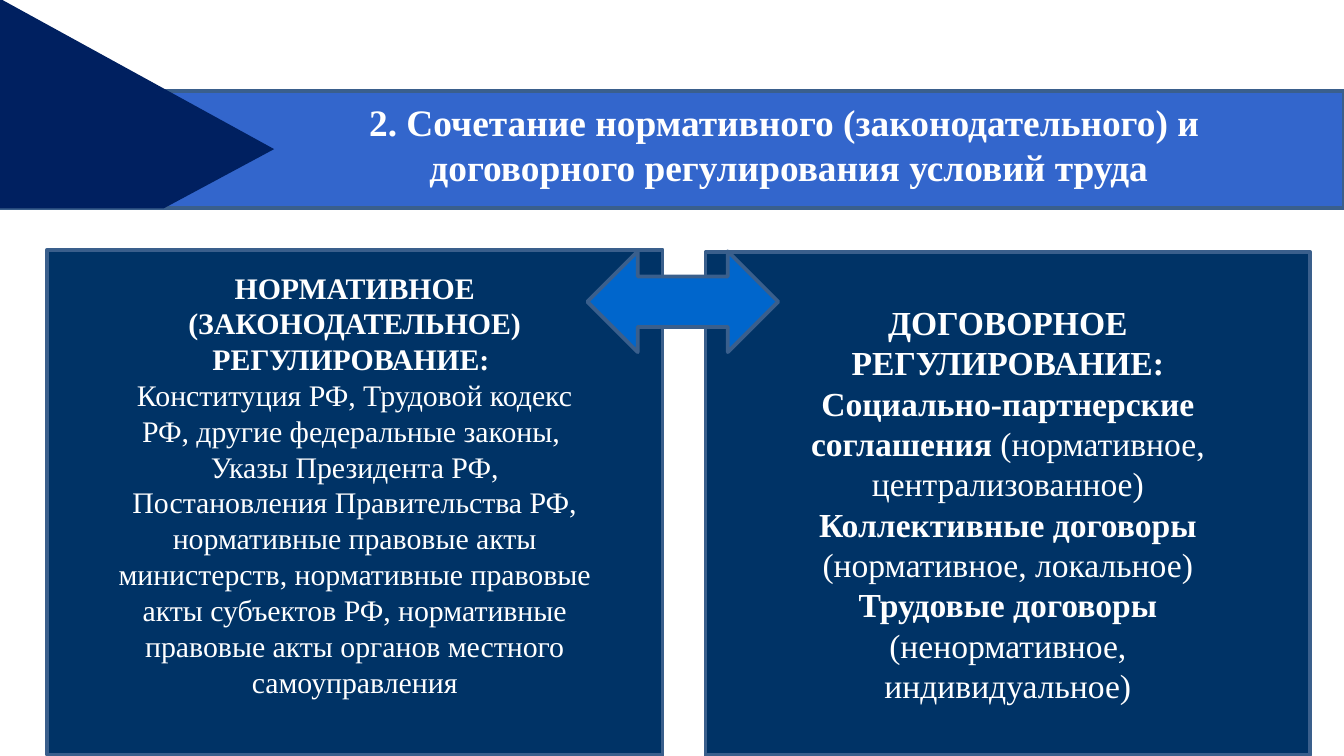
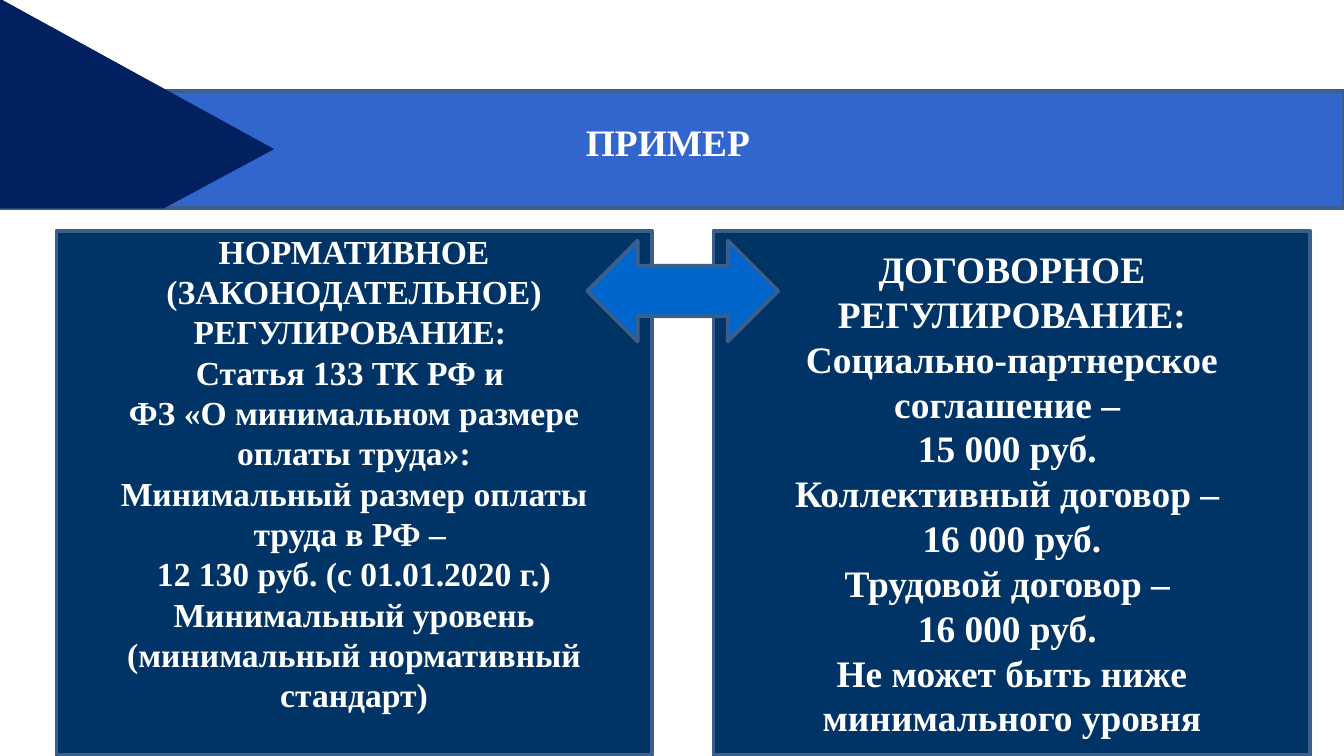
from dataclasses import dataclass

from pptx import Presentation
from pptx.dml.color import RGBColor
from pptx.enum.shapes import MSO_SHAPE
from pptx.enum.text import MSO_ANCHOR, MSO_AUTO_SIZE, PP_ALIGN
from pptx.shapes.autoshape import Shape
from pptx.slide import Slide
from pptx.text.text import TextFrame
from pptx.util import Inches, Pt

WHITE, NAVY, BAND = "FFFFFF", "002060", "3366CC"
PANEL, ARROW, EDGE = "003366", "0066CC", "3A5F8C"
FONT = "Times New Roman"
WIDE = 10
HIGH = WIDE * 9 / 16

Box = tuple[float, float, float, float]
Line = list[tuple[str, bool]]


@dataclass
class Panel:
    left: float
    top: float
    width: float
    size: int
    lines: list[Line]
    pad: float = 0.05


@dataclass
class Page:
    title: list[Line]
    place: Box
    panels: list[Panel]
    top: float


def color(code: str) -> RGBColor:
    return RGBColor.from_string(code)


def bold(*texts: str) -> list[Line]:
    return [[(text, True)] for text in texts]


def plain(*texts: str) -> list[Line]:
    return [[(text, False)] for text in texts]


def paint(shape: Shape, fill: str, edge: str | None = EDGE) -> None:
    shape.shadow.inherit = False
    shape.fill.solid()
    shape.fill.fore_color.rgb = color(fill)
    if edge:
        shape.line.color.rgb = color(edge)
        shape.line.width = Pt(2)
    else:
        shape.line.fill.background()


def add_form(slide: Slide, kind: MSO_SHAPE, box: Box, fill: str) -> Shape:
    shape = slide.shapes.add_shape(kind, *map(Inches, box))
    paint(shape, fill)
    return shape


def write(frame: TextFrame, lines: list[Line], size: int) -> None:
    frame.word_wrap = True
    for i, line in enumerate(lines):
        para = frame.add_paragraph() if i else frame.paragraphs[0]
        para.alignment = PP_ALIGN.CENTER
        para.font.name = FONT
        para.font.size = Pt(size)
        para.font.color.rgb = color(WHITE)
        weights = {heavy for _, heavy in line}
        if len(weights) == 1:
            para.font.bold = weights.pop()
        for text, heavy in line:
            run = para.add_run()
            run.text = text
            if len(line) > 1:
                run.font.bold = heavy


def add_head(slide: Slide, title: list[Line], place: Box) -> None:
    add_form(slide, MSO_SHAPE.RECTANGLE, (0, 0.68, WIDE, 0.87), BAND)
    pen = slide.shapes.build_freeform(Inches(0), Inches(-0.01))
    ends = [(2.04, 1.11), (1.22, 1.55), (0, 1.55)]
    pen.add_line_segments([(Inches(x), Inches(y)) for x, y in ends])
    paint(pen.convert_to_shape(), NAVY, None)
    frame = slide.shapes.add_textbox(*map(Inches, place)).text_frame
    write(frame, title, 20)
    frame.auto_size = MSO_AUTO_SIZE.SHAPE_TO_FIT_TEXT


def add_panel(slide: Slide, panel: Panel) -> None:
    box = (panel.left, panel.top, panel.width, HIGH - panel.top)
    shape = add_form(slide, MSO_SHAPE.HEXAGON, box, PANEL)
    shape.adjustments[0] = 0
    shape.adjustments[1] = 1.15
    frame = shape.text_frame
    frame.vertical_anchor = MSO_ANCHOR.MIDDLE
    frame.margin_bottom = Inches(panel.pad)
    write(frame, panel.lines, panel.size)


def add_page(slide: Slide, page: Page) -> None:
    add_head(slide, page.title, page.place)
    for panel in page.panels:
        add_panel(slide, panel)
    box = (4.37, page.top, 1.42, 0.75)
    add_form(slide, MSO_SHAPE.LEFT_RIGHT_ARROW, box, ARROW)


NORM = "НОРМАТИВНОЕ (ЗАКОНОДАТЕЛЬНОЕ) РЕГУЛИРОВАНИЕ: "
DEAL = "ДОГОВОРНОЕ РЕГУЛИРОВАНИЕ:"

PAGES = [
    Page(
        bold(
            "2. Сочетание нормативного (законодательного) и ",
            "договорного регулирования условий труда",
        ),
        (2.01, 0.69, 7.72, 0.77),
        [
            Panel(
                0.35, 1.85, 4.58, 16,
                bold(NORM)
                + plain(
                    "Конституция РФ, Трудовой кодекс РФ, другие федеральные "
                    "законы, ",
                    "Указы Президента РФ, Постановления Правительства РФ, "
                    "нормативные правовые акты министерств, нормативные "
                    "правовые акты субъектов РФ, нормативные правовые акты "
                    "органов местного самоуправления",
                ),
                0.32,
            ),
            Panel(
                5.25, 1.87, 4.5, 18,
                bold(DEAL)
                + [
                    [("Социально-партнерские соглашения", True),
                     (" (нормативное, централизованное)", False)],
                    [("Коллективные договоры", True),
                     (" (нормативное, локальное)", False)],
                    [("Трудовые договоры", True),
                     (" (ненормативное, индивидуальное)", False)],
                ],
            ),
        ],
        1.87,
    ),
    Page(
        bold("ПРИМЕР"),
        (4.13, 0.84, 1.68, 0.44),
        [
            Panel(
                0.42, 1.71, 4.43, 18,
                bold(
                    NORM,
                    "Статья 133 ТК РФ и ",
                    "ФЗ «О минимальном размере оплаты труда»:",
                    "Минимальный размер оплаты труда в РФ – ",
                    "12 130 руб. (с 01.01.2020 г.)",
                    "Минимальный уровень (минимальный нормативный стандарт)",
                ),
                0.35,
            ),
            Panel(
                5.31, 1.71, 4.44, 20,
                bold(
                    DEAL,
                    "Социально-партнерское соглашение – ",
                    "15 000 руб. ",
                    "Коллективный договор – ",
                    "16 000 руб.",
                    "Трудовой договор – ",
                    "16 000 руб. ",
                    "Не может быть ниже минимального уровня",
                ),
            ),
        ],
        1.79,
    ),
]


def main() -> None:
    deck = Presentation()
    deck.slide_width = Inches(WIDE)
    deck.slide_height = Inches(HIGH)
    for page in PAGES:
        add_page(deck.slides.add_slide(deck.slide_layouts[6]), page)
    deck.save("out.pptx")


if __name__ == "__main__":
    main()
